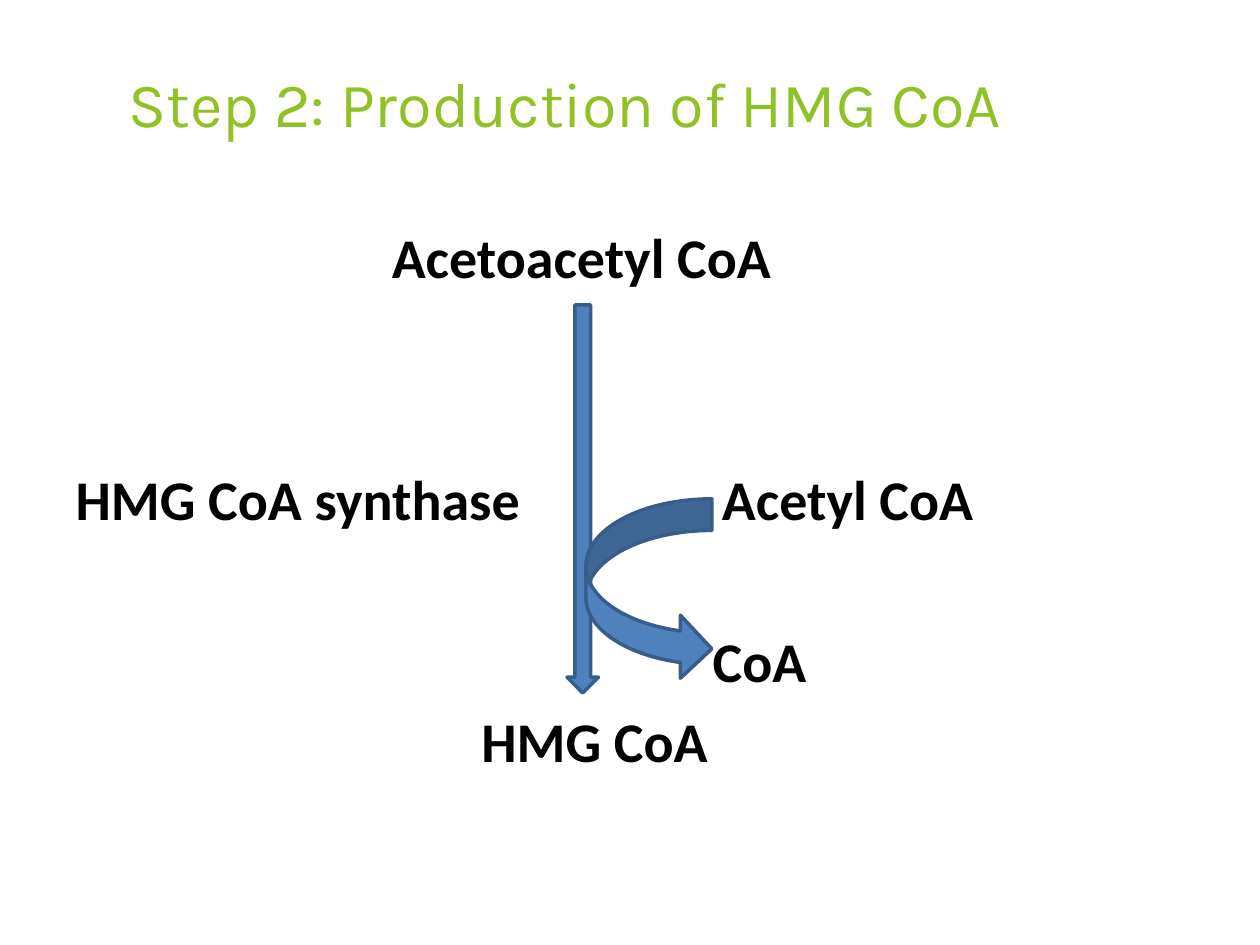
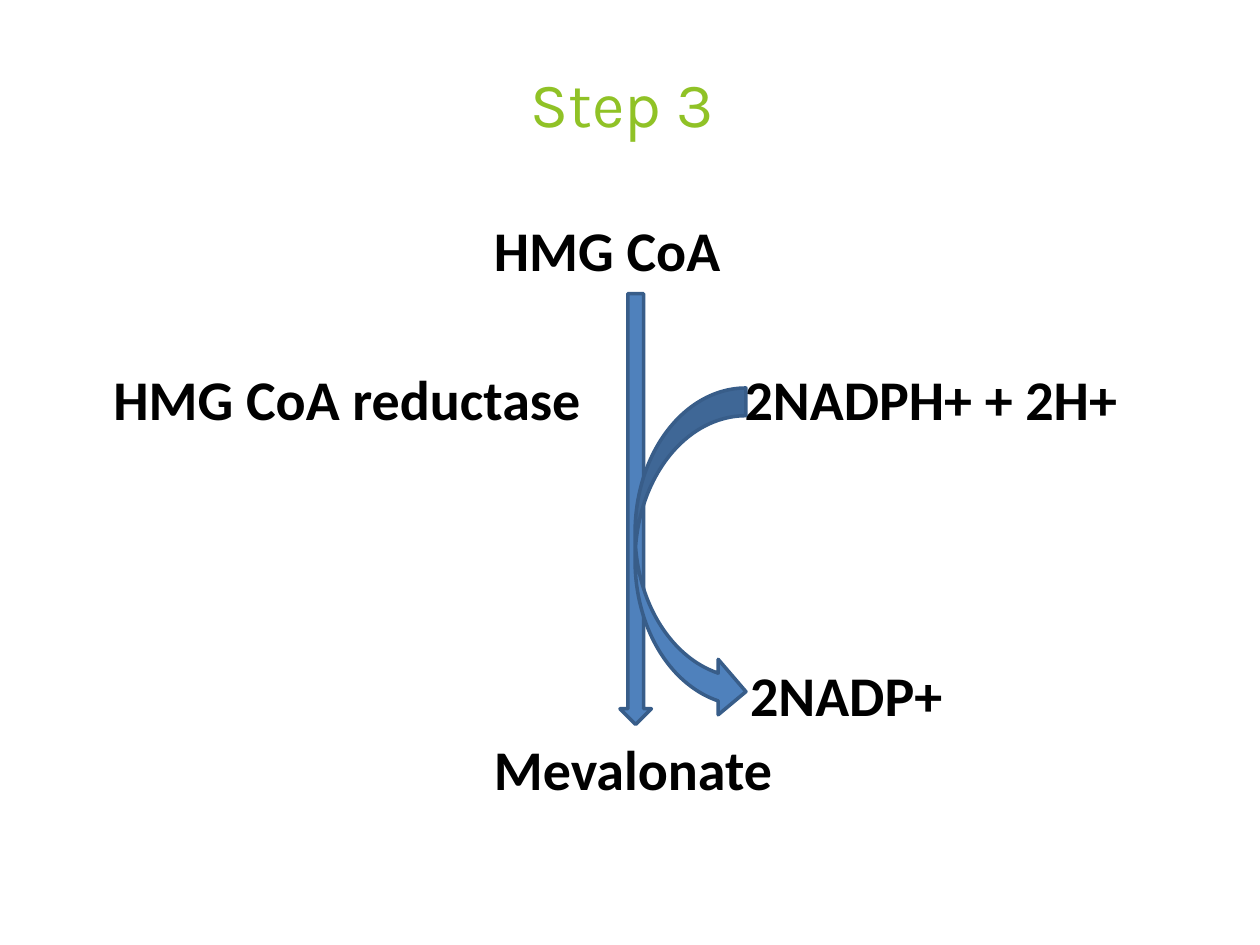
from pptx import Presentation
from pptx.dml.color import RGBColor
from pptx.enum.shapes import MSO_SHAPE
from pptx.enum.text import MSO_ANCHOR, MSO_AUTO_SIZE, PP_ALIGN
from pptx.util import Inches, Pt

TITLE_COLOR = "90C226"
TEXT_COLOR = "000000"
ARROW_FILL = "4F81BC"
ARROW_LINE = "385D89"

TITLE_FONT = {"name": "Karla", "size": Pt(36), "bold": False}
LABEL_FONT = {"name": "Calibri", "size": Pt(32), "bold": True}
FRAME_FORMAT = {
    "margin_left": Inches(0.01),
    "margin_right": 0,
    "margin_top": Inches(0.01),
    "margin_bottom": 0,
    "word_wrap": True,
    "vertical_anchor": MSO_ANCHOR.TOP,
    "auto_size": MSO_AUTO_SIZE.SHAPE_TO_FIT_TEXT,
}
LABEL_HEIGHT = 0.56

# Boxes are left, top, width, height; labels are text, left, top, width.
# The lower box holds the by-product (right) above the product (left).
STEPS = [
    {
        "title": ("Step 2: Production of HMG CoA", 1.01, 7.97),
        "labels": [
            ("Acetoacetyl CoA", 3.1, 1.76, 3.04),
            ("HMG CoA synthase", 0.59, 3.68, 3.56),
            ("Acetyl CoA", 5.72, 3.68, 2.02),
        ],
        "products": ("CoA", "HMG CoA"),
        "products_box": (3.81, 4.85, 2.59, 1.31),
        "products_margin": 0.12,
        "products_spacing": (8.7, 7.7),
        "reaction_arrow": (4.5, 2.42, 0.25, 3.08),
        "cofactor_arrow": (4.65, 3.96, 1, 1.44),
    },
    {
        "title": ("Step 3", 4.2, 1.61),
        "labels": [
            ("HMG CoA", 3.91, 1.7, 1.83),
            ("HMG CoA reductase", 0.89, 2.88, 3.74),
            ("2NADPH+ + 2H+", 5.9, 2.88, 2.99),
        ],
        "products": ("2NADP+", "Mevalonate"),
        "products_box": (3.91, 5.17, 3.57, 1.2),
        "products_margin": 0.07,
        "products_spacing": (4.8, 3.8),
        "reaction_arrow": (4.92, 2.33, 0.25, 3.42),
        "cofactor_arrow": (5.04, 3.08, 0.88, 2.63),
    },
]


def color(hex_value):
    return RGBColor.from_string(hex_value)


def write_lines(shape, lines, font_format, font_color):
    """Fill a shape with (text, alignment, space before) paragraphs."""
    frame = shape.text_frame
    for name, value in FRAME_FORMAT.items():
        setattr(frame, name, value)
    frame.text = "\n".join(text for text, _, _ in lines)
    for paragraph, (_, alignment, space_before) in zip(frame.paragraphs, lines):
        paragraph.alignment = alignment
        paragraph.space_before = Pt(space_before)
        font = paragraph.runs[0].font
        for name, value in font_format.items():
            setattr(font, name, value)
        font.color.rgb = color(font_color)


presentation = Presentation()
presentation.slide_width = Inches(10)
presentation.slide_height = Inches(7.5)
title_only = presentation.slide_layouts.get_by_name("Title Only")

for step in STEPS:
    slide = presentation.slides.add_slide(title_only)

    title_text, title_left, title_width = step["title"]
    title = slide.shapes.title
    title.left, title.top = Inches(title_left), Inches(0.5)
    title.width, title.height = Inches(title_width), Inches(0.62)
    write_lines(title, [(title_text, PP_ALIGN.LEFT, 1.1)], TITLE_FONT, TITLE_COLOR)

    for text, left, top, width in step["labels"]:
        box = (left, top, width, LABEL_HEIGHT)
        label = slide.shapes.add_textbox(*map(Inches, box))
        write_lines(label, [(text, PP_ALIGN.LEFT, 1.1)], LABEL_FONT, TEXT_COLOR)

    products = slide.shapes.add_textbox(*map(Inches, step["products_box"]))
    alignments = (PP_ALIGN.RIGHT, PP_ALIGN.LEFT)
    product_lines = list(zip(step["products"], alignments, step["products_spacing"]))
    write_lines(products, product_lines, LABEL_FONT, TEXT_COLOR)
    products.text_frame.margin_top = Inches(step["products_margin"])

    for preset, box in (
        (MSO_SHAPE.DOWN_ARROW, step["reaction_arrow"]),
        (MSO_SHAPE.CURVED_RIGHT_ARROW, step["cofactor_arrow"]),
    ):
        arrow = slide.shapes.add_shape(preset, *map(Inches, box))
        arrow.shadow.inherit = False
        arrow.fill.solid()
        arrow.fill.fore_color.rgb = color(ARROW_FILL)
        arrow.line.color.rgb = color(ARROW_LINE)
        arrow.line.width = Pt(2)

presentation.save("out.pptx")
